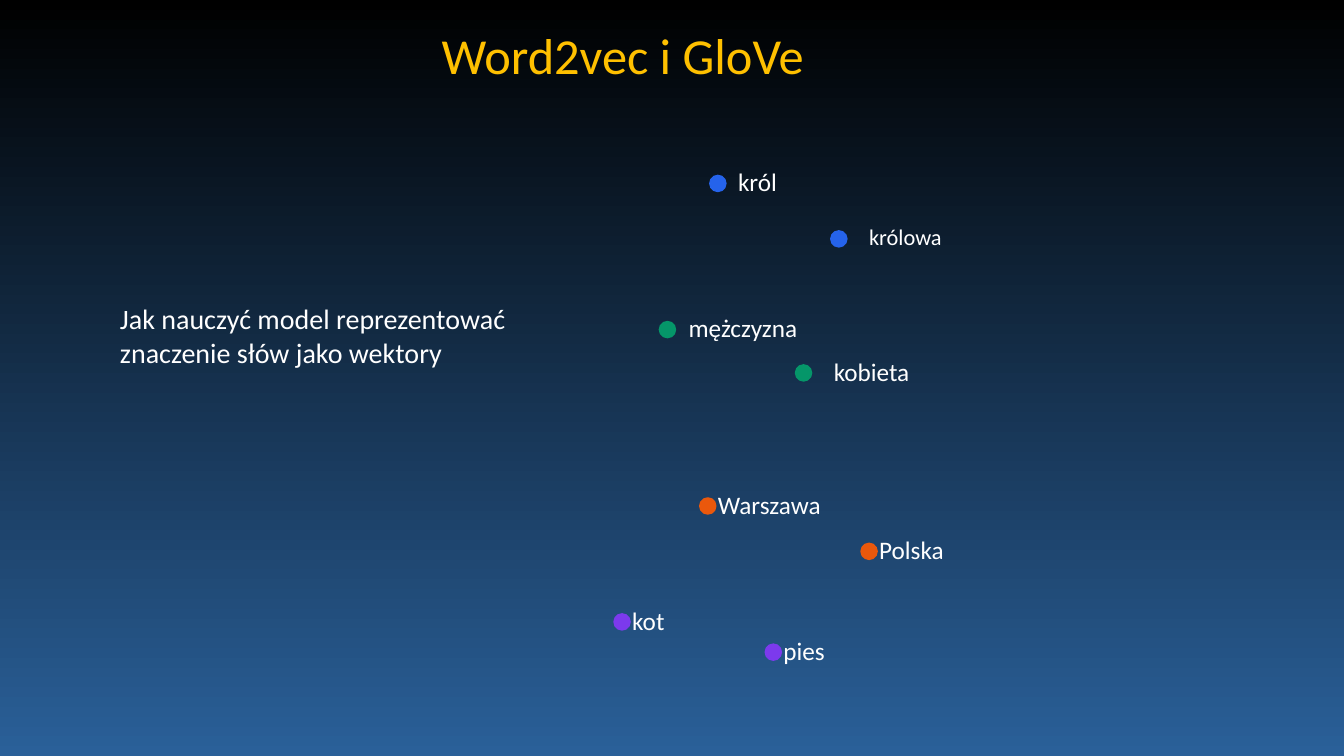
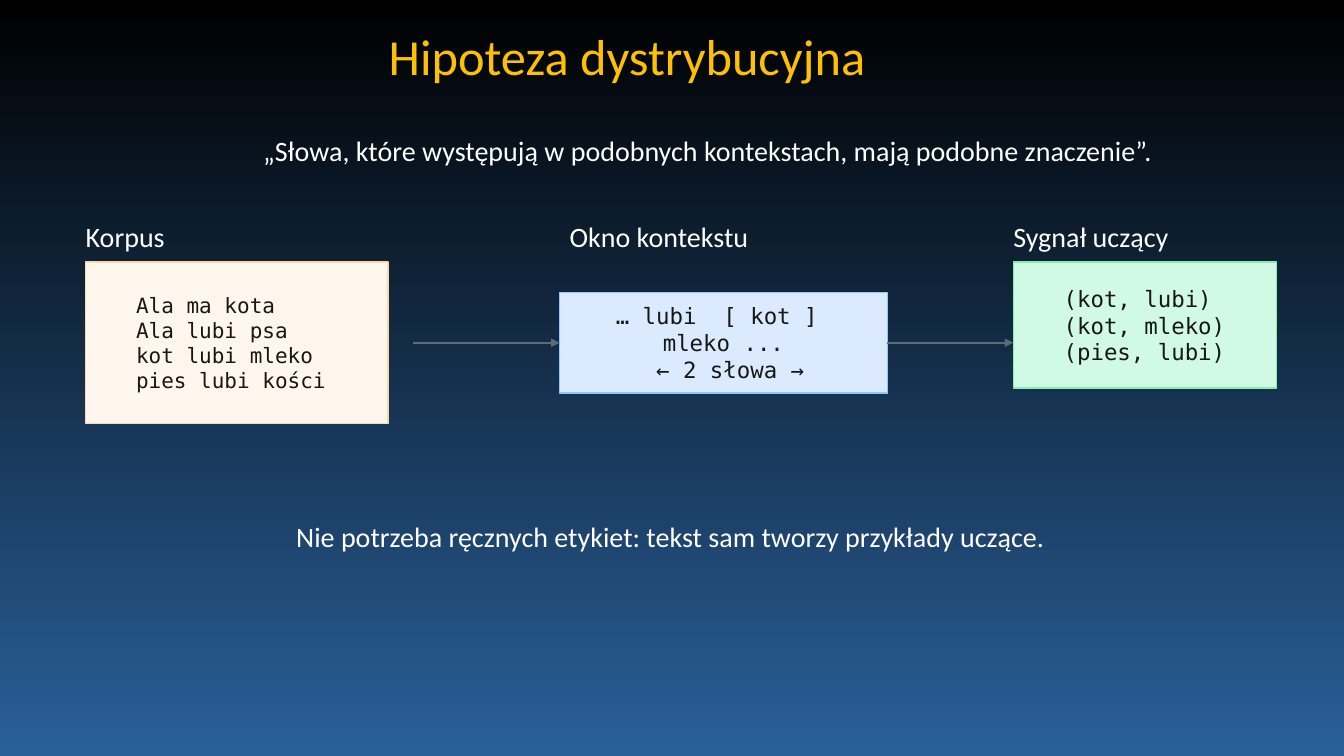
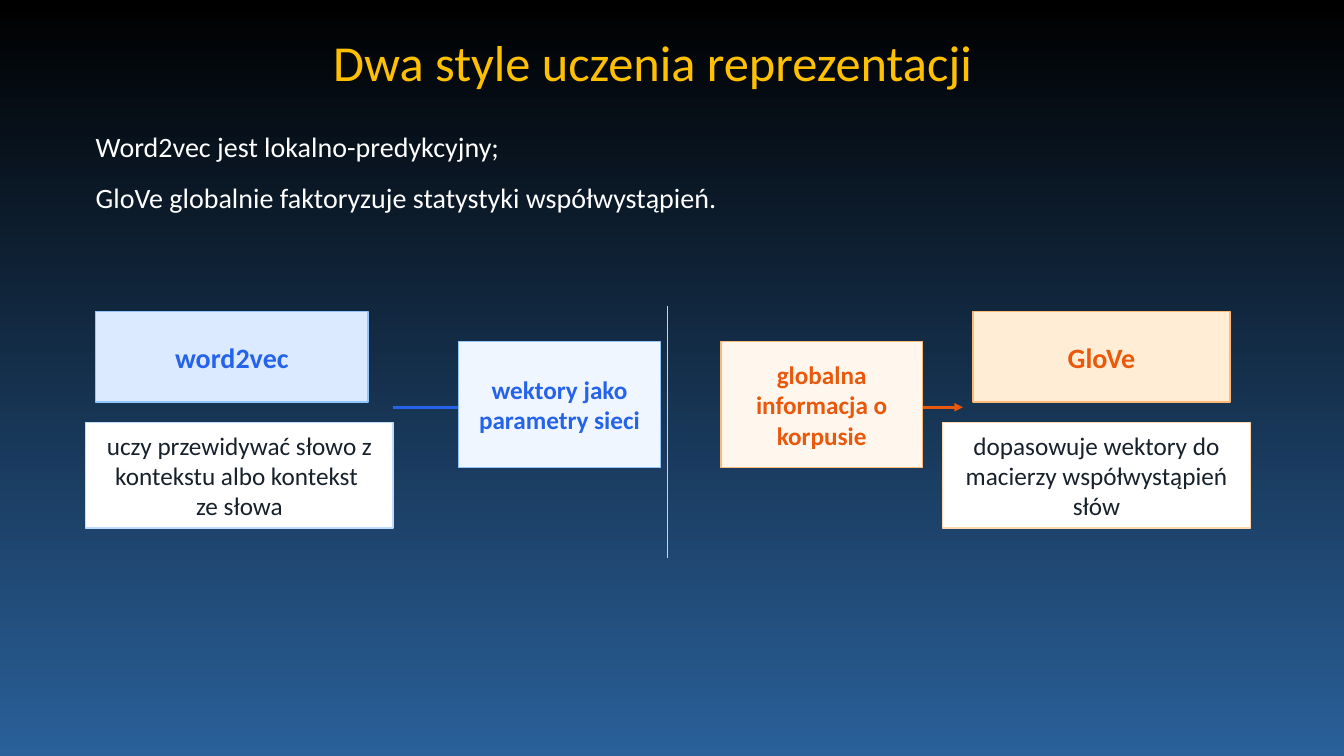
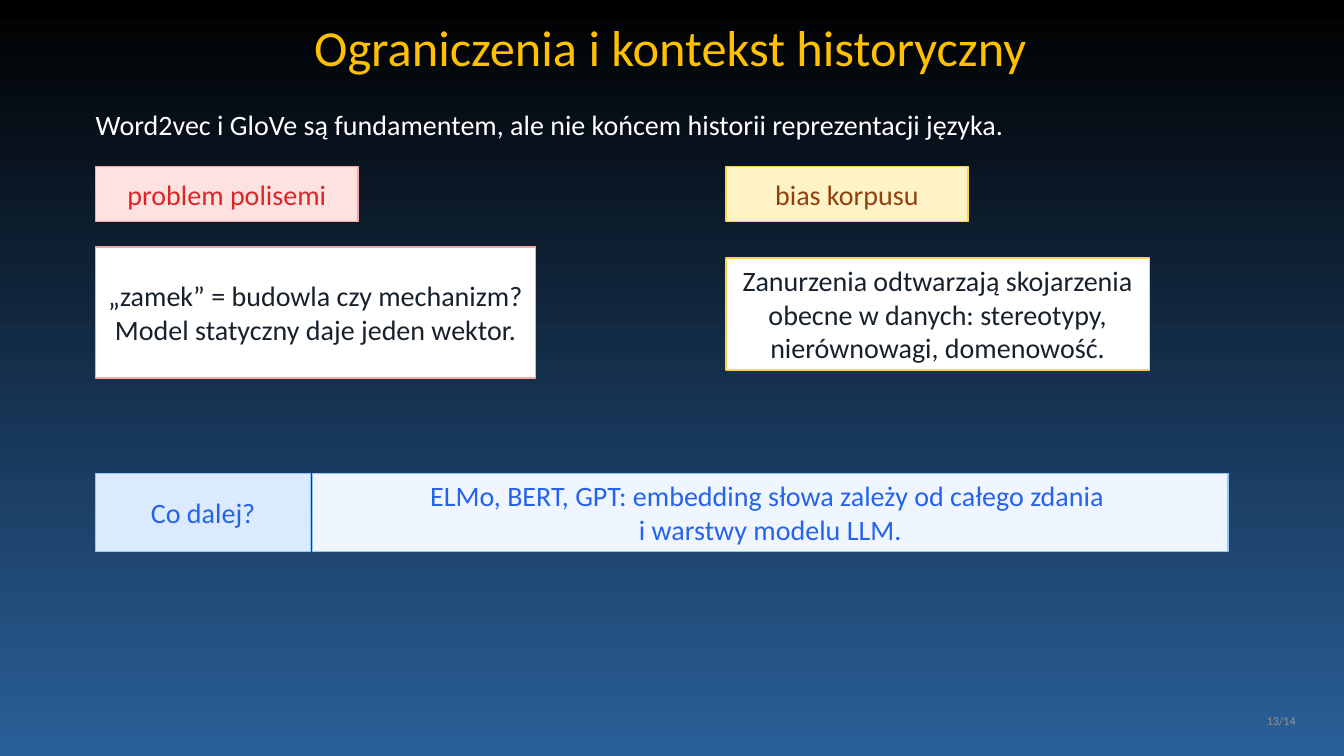
from dataclasses import dataclass

from lxml import etree
from pptx import Presentation
from pptx.dml.color import RGBColor
from pptx.enum.shapes import MSO_CONNECTOR, MSO_SHAPE
from pptx.enum.text import MSO_ANCHOR, PP_ALIGN
from pptx.oxml.ns import qn
from pptx.util import Emu, Pt

LEFT, MID, RIGHT = PP_ALIGN.LEFT, PP_ALIGN.CENTER, PP_ALIGN.RIGHT
MIDDLE = MSO_ANCHOR.MIDDLE
RECT, OVAL = MSO_SHAPE.RECTANGLE, MSO_SHAPE.OVAL
STRAIGHT = MSO_CONNECTOR.STRAIGHT
WEST, EAST = 1, 3
SCALE = 9144


@dataclass(frozen=True)
class Theme:
    sans: str = "Calibri"
    mono: str = "DejaVu Sans Mono"
    head: int = 36
    body: int = 20
    label: int = 18
    small: int = 16
    code: int = 15
    foot: float = 8.5
    top: str = "000000"
    base: str = "2A6099"
    gold: str = "FFC000"
    white: str = "FFFFFF"
    ink: str = "17212B"
    black: str = "171717"
    blue: str = "2563EB"
    sky: str = "93C5FD"
    pale: str = "BFDBFE"
    ice: str = "DBEAFE"
    mist: str = "EFF6FF"
    orange: str = "EA580C"
    peach: str = "FDBA74"
    sand: str = "FED7AA"
    cream: str = "FFEDD5"
    milk: str = "FFF7ED"
    green: str = "059669"
    leaf: str = "86EFAC"
    mint: str = "D1FAE5"
    violet: str = "7C3AED"
    red: str = "DC2626"
    rose: str = "FCA5A5"
    blush: str = "FEE2E2"
    brown: str = "92400E"
    yellow: str = "FCD34D"
    butter: str = "FEF3C7"
    slate: str = "5D6B78"
    rule: str = "D6D0C7"
    gray: str = "9A9288"


def px(count):
    return Emu(count * SCALE)


def rgb(code):
    return RGBColor.from_string(code)


def write(shape, text, *, font, size, color, bold=False, align=LEFT, after=0, indent=0):
    frame = shape.text_frame
    frame.word_wrap = True
    frame.vertical_anchor = MIDDLE
    frame.margin_left = frame.margin_right = frame.margin_top = frame.margin_bottom = 0
    frame.text = text
    for para in frame.paragraphs:
        para.alignment = align
        if after:
            para.space_after = Pt(after)
        if indent:
            para._p.get_or_add_pPr().set("marL", str(px(indent)))
        for run in para.runs:
            run.font.name = font
            run.font.size = Pt(size)
            run.font.bold = bold
            run.font.color.rgb = rgb(color)


class Deck:
    def __init__(self, theme):
        self.theme = theme
        self.show = Presentation()
        self.show.slide_width, self.show.slide_height = px(1333), px(750)
        self.slide = None

    def page(self, title, x, y, w, h, align=MID):
        self.slide = self.show.slides.add_slide(self.show.slide_layouts[6])
        fill = self.slide.background.fill
        fill.gradient()
        fill.gradient_angle = 270
        for stop, color in zip(fill.gradient_stops, (self.theme.top, self.theme.base)):
            stop.color.rgb = rgb(color)
        self.text(title, x, y, w, h, size=self.theme.head, color=self.theme.gold, align=align)

    def style(self, style):
        plain = {"font": self.theme.sans, "size": self.theme.body, "color": self.theme.white}
        return {**plain, **style}

    def text(self, text, x, y, w, h, **style):
        area = self.slide.shapes.add_textbox(px(x), px(y), px(w), px(h))
        write(area, text, **self.style(style))

    def shape(self, kind, x, y, w, h, fill, edge):
        shape = self.slide.shapes.add_shape(kind, px(x), px(y), px(w), px(h))
        shape.shadow.inherit = False
        shape.fill.solid()
        shape.fill.fore_color.rgb = rgb(fill)
        shape.line.color.rgb = rgb(edge)
        shape.line.width = Pt(1)
        return shape

    def box(self, text, x, y, w, h, fill, edge, **style):
        shape = self.shape(RECT, x, y, w, h, fill, edge)
        write(shape, text, **self.style({"align": MID, **style}))
        return shape

    def dot(self, x, y, color):
        self.shape(OVAL, x, y, 16, 16, color, color)

    def line(self, x1, y1, x2, y2, color, width, arrow=True):
        line = self.slide.shapes.add_connector(STRAIGHT, px(x1), px(y1), px(x2), px(y2))
        line.line.color.rgb = rgb(color)
        line.line.width = Pt(width)
        if arrow:
            etree.SubElement(line.line._get_or_add_ln(), qn("a:tailEnd"), type="triangle")
        etree.SubElement(line._element.spPr, qn("a:effectLst"))
        return line


def vectors(deck):
    t = deck.theme
    deck.page("Word2vec i GloVe", 438, 18, 448, 72, align=LEFT)
    deck.text("Jak nauczyć model reprezentować \vznaczenie słów jako wektory", 119, 288, 448, 89)
    for word, x, y, gap, color, size in (
        ("król", 704, 174, 12, t.blue, t.label),
        ("królowa", 824, 229, 22, t.blue, t.small),
        ("mężczyzna", 654, 319, 13, t.green, t.label),
        ("kobieta", 789, 362, 22, t.green, t.label),
        ("Warszawa", 694, 494, 2, t.orange, t.label),
        ("Polska", 854, 539, 2, t.orange, t.label),
        ("kot", 609, 609, 2, t.violet, t.label),
        ("pies", 759, 639, 2, t.violet, t.label),
    ):
        deck.dot(x, y, color)
        deck.text(word, x + 16 + gap, y - 3, 110, 18, size=size)


def context(deck):
    t = deck.theme
    deck.page("Hipoteza dystrybucyjna", 177, 16, 890, 78)
    deck.text("„Słowa, które występują w podobnych kontekstach, mają podobne znaczenie”.",
              261, 99, 931, 100)
    for text, x, w in (("Korpus", 85, 120), ("Okno kontekstu", 565, 260), ("Sygnał uczący", 1005, 240)):
        deck.text(text, x, 220, w, 28)
    mono = {"font": t.mono, "color": t.black}
    deck.box("Ala ma kota\nAla lubi psa\nkot lubi mleko\npies lubi kości",
             85, 260, 300, 160, t.milk, t.sand, size=t.code, align=LEFT, indent=50, **mono)
    window = deck.box("… lubi  [ kot ]  mleko ...\n ← 2 słowa →",
                      555, 290, 325, 100, t.ice, t.sky, size=t.small, **mono)
    deck.box("(kot, lubi)\n(kot, mleko)\n(pies, lubi)",
             1005, 260, 261, 125, t.mint, t.leaf, size=t.small, align=LEFT, indent=50, **mono)
    deck.line(410, 340, 555, 340, t.slate, 1.7).end_connect(window, WEST)
    deck.line(880, 340, 1005, 340, t.slate, 1.7).begin_connect(window, EAST)
    deck.text("Nie potrzeba ręcznych etykiet: tekst sam tworzy przykłady uczące.",
              105, 515, 1120, 35, align=MID)


def styles(deck):
    t = deck.theme
    deck.page("Dwa style uczenia reprezentacji", 55, 38, 1185, 45)
    deck.text("Word2vec jest lokalno-predykcyjny;\n"
              "GloVe globalnie faktoryzuje statystyki współwystąpień.",
              95, 135, 1030, 71, after=12)
    deck.line(390, 404, 500, 404, t.blue, 2)
    deck.line(835, 404, 955, 404, t.orange, 2)
    for name, x, w, fill, edge, color, note, left, rim, trait, start, tint in (
        ("word2vec", 95, 270, t.ice, t.sky, t.blue,
         "uczy przewidywać słowo z kontekstu albo kontekst \vze słowa", 85, t.pale,
         "wektory jako parametry sieci", 455, t.mist),
        ("GloVe", 965, 255, t.cream, t.peach, t.orange,
         "dopasowuje wektory do macierzy współwystąpień słów", 935, t.sand,
         "globalna informacja o korpusie", 715, t.milk),
    ):
        deck.box(name, x, 309, w, 90, fill, edge, color=color, bold=True)
        deck.box(note, left, 419, 305, 105, t.white, rim, size=t.label, color=t.ink)
        deck.box(trait, start, 339, 200, 125, tint, edge, size=t.label, color=color, bold=True)
    deck.line(662, 304, 662, 554, t.rule, 1, arrow=False)


def limits(deck):
    t = deck.theme
    deck.page("Ograniczenia i kontekst historyczny", 220, 23, 890, 45)
    deck.text("Word2vec i GloVe są fundamentem, ale nie końcem historii reprezentacji języka.",
              95, 96, 954, 55)
    for text, x, y, w, h, fill, edge, color in (
        ("problem polisemi", 95, 165, 260, 55, t.blush, t.rose, t.red),
        ("„zamek” = budowla czy mechanizm?\nModel statyczny daje jeden wektor.",
         95, 245, 436, 130, t.white, t.rose, t.ink),
        ("bias korpusu", 720, 165, 240, 55, t.butter, t.yellow, t.brown),
        ("Zanurzenia odtwarzają skojarzenia obecne w danych: stereotypy, nierównowagi, domenowość.",
         720, 256, 420, 111, t.white, t.yellow, t.ink),
        ("Co dalej?", 95, 470, 213, 77, t.ice, t.sky, t.blue),
        ("ELMo, BERT, GPT: embedding słowa zależy od całego zdania \vi warstwy modelu LLM.",
         310, 470, 908, 77, t.mist, t.sky, t.blue),
    ):
        deck.box(text, x, y, w, h, fill, edge, color=color)
    deck.text("13/14", 1225, 705, 60, 20, size=t.foot, color=t.gray, align=RIGHT)


def main():
    deck = Deck(Theme())
    for build in (vectors, context, styles, limits):
        build(deck)
    deck.show.save("out.pptx")


if __name__ == "__main__":
    main()
